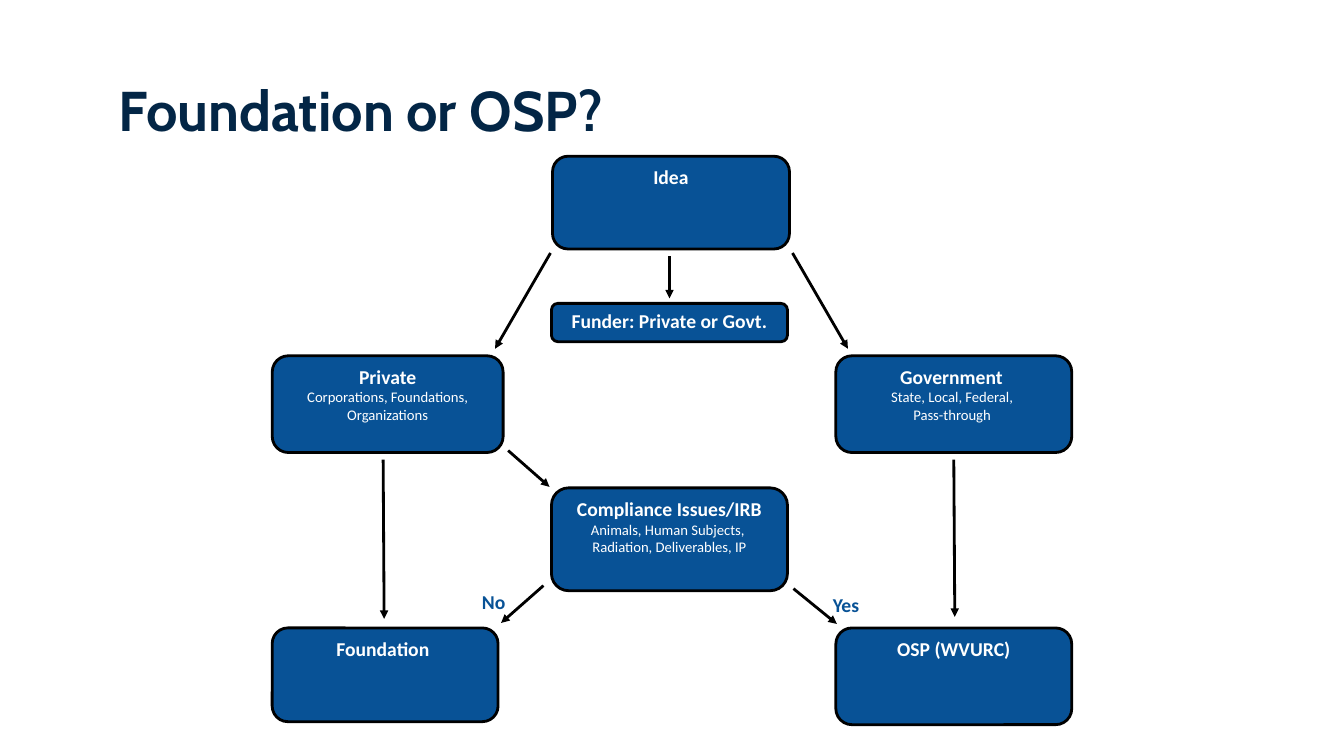
from dataclasses import dataclass

from lxml.etree import SubElement
from pptx import Presentation
from pptx.dml.color import RGBColor
from pptx.enum.shapes import MSO_CONNECTOR as Connector, MSO_SHAPE as Shape
from pptx.enum.text import MSO_ANCHOR as Anchor, PP_ALIGN as Align
from pptx.oxml.ns import qn
from pptx.util import Inches, Pt

NAVY, BLUE, BLACK, WHITE = "032646", "085296", "000000", "FFFFFF"
LINE_WIDTH = Pt(2)
INSET = Inches(0.04)


@dataclass(frozen=True)
class Box:
    left: float
    top: float
    width: float
    height: float
    heading: str
    details: tuple[str, ...] = ()


@dataclass(frozen=True)
class Arrow:
    start: tuple[float, float]
    end: tuple[float, float]


LEFT_COLUMN, MIDDLE_COLUMN, RIGHT_COLUMN = 2.7, 5.47, 8.29
WIDTH = 2.34

BOXES = (
    Box(5.48, 1.55, 2.35, 0.92, "Idea"),
    Box(MIDDLE_COLUMN, 3.01, WIDTH, 0.38, "Funder: Private or Govt."),
    Box(LEFT_COLUMN, 3.53, 2.29, 0.96, "Private",
        ("Corporations, Foundations, Organizations",)),
    Box(RIGHT_COLUMN, 3.53, WIDTH, 0.96, "Government ",
        ("State, Local, Federal, ", "Pass-through ")),
    Box(MIDDLE_COLUMN, 4.84, WIDTH, 1.02, "Compliance Issues/IRB",
        ("Animals, Human Subjects, ", "Radiation, Deliverables, IP")),
    Box(LEFT_COLUMN, 6.23, 2.24, 0.93, "Foundation "),
    Box(RIGHT_COLUMN, 6.23, WIDTH, 0.96, "OSP (WVURC)"),
)

ARROWS = (
    Arrow((6.64, 2.54), (6.64, 2.96)),
    Arrow((7.86, 2.51), (8.41, 3.46)),
    Arrow((5.46, 2.51), (4.91, 3.46)),
    Arrow((9.46, 4.56), (9.47, 6.12)),
    Arrow((3.8, 4.56), (3.81, 6.14)),
    Arrow((5.04, 4.47), (5.45, 4.83)),
    Arrow((5.39, 5.81), (4.97, 6.18)),
    Arrow((7.87, 5.84), (8.3, 6.19)),
)

ANSWERS = (
    Box(8.22, 5.84, 0.48, 0.45, "Yes"),
    Box(4.74, 5.81, 0.4, 0.31, "No"),
)


def rgb(value: str) -> RGBColor:
    return RGBColor.from_string(value)


def place(box: Box) -> tuple:
    return tuple(map(Inches, (box.left, box.top, box.width, box.height)))


def style_font(paragraph, size: float, color: str, bold: bool,
               name: str = "Calibri") -> None:
    for run in paragraph.runs:
        run.font.name = name
        run.font.size = Pt(size)
        run.font.bold = bold
        run.font.color.rgb = rgb(color)


def write_box_text(shape, box: Box, color: str, align: Align) -> None:
    """Fill a shape with a bold heading and smaller detail lines."""
    frame = shape.text_frame
    frame.word_wrap = True
    frame.vertical_anchor = Anchor.TOP
    frame.margin_left = frame.margin_right = INSET
    frame.margin_top = frame.margin_bottom = INSET
    frame.text = "\n".join((box.heading, *box.details))
    for index, paragraph in enumerate(frame.paragraphs):
        paragraph.alignment = align
        is_heading = index == 0
        style_font(paragraph, 14 if is_heading else 10.5, color, is_heading)


def add_box(slide, box: Box) -> None:
    shape = slide.shapes.add_shape(Shape.ROUNDED_RECTANGLE, *place(box))
    shape.shadow.inherit = False
    shape.fill.solid()
    shape.fill.fore_color.rgb = rgb(BLUE)
    shape.line.color.rgb = rgb(BLACK)
    shape.line.width = LINE_WIDTH
    write_box_text(shape, box, WHITE, Align.CENTER)


def add_answer(slide, answer: Box) -> None:
    text_box = slide.shapes.add_textbox(*place(answer))
    write_box_text(text_box, answer, BLUE, Align.LEFT)


def add_arrow(slide, arrow: Arrow) -> None:
    points = map(Inches, (*arrow.start, *arrow.end))
    connector = slide.shapes.add_connector(Connector.STRAIGHT, *points)
    connector.line.color.rgb = rgb(BLACK)
    connector.line.width = LINE_WIDTH
    SubElement(connector.line._get_or_add_ln(), qn("a:tailEnd"), type="triangle")
    SubElement(connector._element.spPr, qn("a:effectLst"))


def set_title(slide) -> None:
    title = slide.shapes.title
    title.left, title.top = Inches(1.08), Inches(0.4)
    title.width, title.height = Inches(11.5), Inches(1.45)
    title.text_frame.text = "Foundation or OSP?"
    title.text_frame.vertical_anchor = Anchor.MIDDLE
    paragraph = title.text_frame.paragraphs[0]
    paragraph.alignment = Align.LEFT
    paragraph.line_spacing = 0.9
    style_font(paragraph, 40, NAVY, True, "Cabin")


def main() -> None:
    presentation = Presentation()
    presentation.slide_width = Inches(13.33)
    presentation.slide_height = Inches(7.5)
    slide = presentation.slides.add_slide(presentation.slide_layouts[5])
    set_title(slide)
    for box in BOXES:
        add_box(slide, box)
    for arrow in ARROWS:
        add_arrow(slide, arrow)
    for answer in ANSWERS:
        add_answer(slide, answer)
    presentation.save("out.pptx")


if __name__ == "__main__":
    main()
